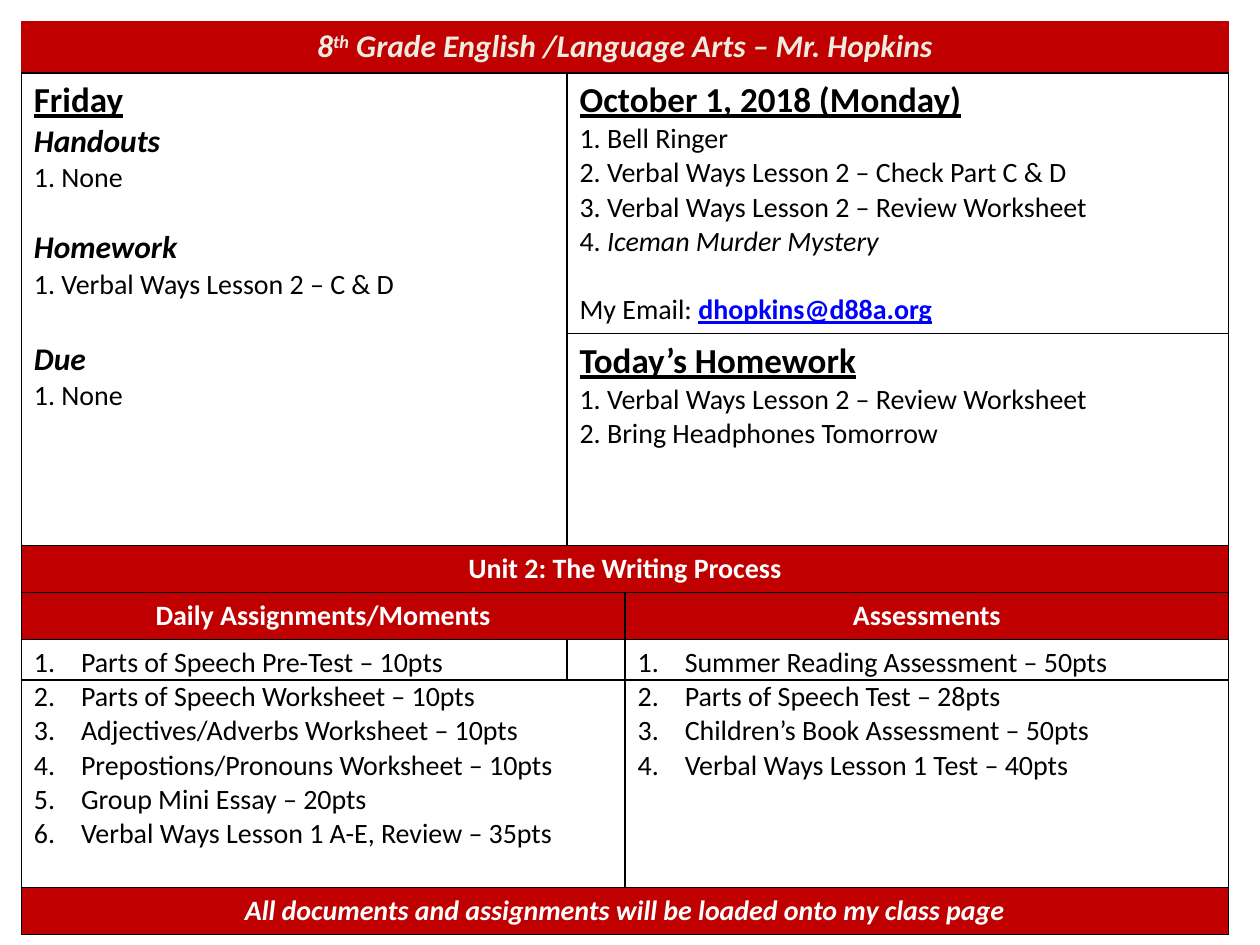
import pptx
import pptx.util
import pptx.dml.color
import pptx.enum.text
import pptx.oxml
import lxml.etree
from pptx.util import Cm, Pt

NS = "http://schemas.openxmlformats.org/drawingml/2006/main"
RED, WHITE, CREAM, BLACK, BLUE = "C00000", "FFFFFF", "EEECE1", "000000", "0000FF"

# Run styles: size, colour, marks (b bold, i italic, u underline, s superscript)
BAR = (18, CREAM, "bi")
SUP = (18, CREAM, "bis")
BAND = (16, WHITE, "b")
FOOT = (16, WHITE, "bi")
HEAD = (20, BLACK, "bu")
SUB = (18, BLACK, "bi")
BODY = (16, BLACK, "")
BOOK = (16, BLACK, "i")
MAIL = (16, BLUE, "bu")


def grid(top, cols, rows, edge):
    """Add a plain table; edge tells whether cells get black borders."""
    frame = slide.shapes.add_table(len(rows), len(cols), Cm(0.43), Cm(top),
                                   Cm(sum(cols)), Cm(sum(rows)))
    table = frame.table
    table.first_row = table.horz_banding = False
    # "No Style, No Grid"
    table._tbl.tblPr.find(f"{{{NS}}}tableStyleId").text = \
        "{2D5ABB26-0587-4C30-8999-92F81FD0307C}"
    for col, wide in zip(table.columns, cols):
        col.width = Cm(wide)
    for row, high in zip(table.rows, rows):
        row.height = Cm(high)
    for cell in table.iter_cells():
        props = cell._tc.get_or_add_tcPr()
        for side in ("lnL", "lnR", "lnT", "lnB") if edge else ():
            props.append(pptx.oxml.parse_xml(
                f'<a:{side} xmlns:a="{NS}" w="12700"><a:solidFill>'
                f'<a:srgbClr val="{BLACK}"/></a:solidFill></a:{side}>'))
        cell.fill.background()
    return table


def write(cell, lines, fill=None, count=False):
    """Fill a cell; a line is a list of (style, text) runs, or a gap in points."""
    if fill:
        cell.fill.solid()
        cell.fill.fore_color.rgb = pptx.dml.color.RGBColor.from_string(fill)
    frame, gap, first = cell.text_frame, 0, True
    for line in lines:
        if isinstance(line, (int, float)):
            gap = line
            continue
        para = frame.paragraphs[0] if first else frame.add_paragraph()
        first = False
        if count:
            props = para._p.get_or_add_pPr()
            props.set("marL", str(Cm(0.95)))
            props.set("indent", str(-Cm(0.95)))
            lxml.etree.SubElement(props, f"{{{NS}}}buFont", typeface="+mj-lt")
            lxml.etree.SubElement(props, f"{{{NS}}}buAutoNum", type="arabicPeriod")
        if fill:
            para.alignment = pptx.enum.text.PP_ALIGN.CENTER
        if gap:
            para.space_before = Pt(gap)
            gap = 0
        for (size, tint, marks), text in line:
            run = para.add_run()
            run.text = text
            font = run.font
            font.name, font.size = "Calibri", Pt(size)
            font.color.rgb = pptx.dml.color.RGBColor.from_string(tint)
            font.bold, font.italic = "b" in marks, "i" in marks
            font.underline = "u" in marks
            if "s" in marks:
                run._r.get_or_add_rPr().set("baseline", "30000")


deck = pptx.Presentation()
deck.slide_width, deck.slide_height = Cm(25.4), Cm(19.05)
slide = deck.slides.add_slide(deck.slide_layouts[6])

# Agenda: last class on the left, today on the right
plan = grid(1.47, [11, 13.34], [4.65, 4.65], True)
plan.cell(0, 0).merge(plan.cell(1, 0))
write(plan.cell(0, 0), [
    [(HEAD, "Friday")],
    [(SUB, "Handouts")],
    [(BODY, "1. None")],
    19.5,
    [(SUB, "Homework")],
    [(BODY, "1. Verbal Ways Lesson 2 – C & D")],
    22,
    [(SUB, "Due")],
    [(BODY, "1. None")],
])
write(plan.cell(0, 1), [
    [(HEAD, "October 1, 2018 (Monday)")],
    [(BODY, "1. Bell Ringer")],
    [(BODY, "2. Verbal Ways Lesson 2 – Check Part C & D")],
    [(BODY, "3. Verbal Ways Lesson 2 – Review Worksheet")],
    [(BODY, "4. "), (BOOK, "Iceman Murder Mystery")],
    19.5,
    [(BODY, "My Email: "), (MAIL, "dhopkins@d88a.org")],
])
write(plan.cell(1, 1), [
    [(HEAD, "Today’s Homework")],
    [(BODY, "1. Verbal Ways Lesson 2 – Review Worksheet")],
    [(BODY, "2. Bring Headphones Tomorrow")],
])

# Class banner
top = grid(0.43, [24.34], [1.03], False)
write(top.cell(0, 0), [[(BAR, "8"), (SUP, "th"),
                        (BAR, " Grade English /Language Arts – Mr. Hopkins")]], RED)

# Unit work and scores
unit = grid(11, [12.17, 12.17], [0.94, 0.94, 5, 0.94], True)
for row in (0, 3):
    unit.cell(row, 0).merge(unit.cell(row, 1))
write(unit.cell(0, 0), [[(BAND, "Unit 2: The Writing Process")]], RED)
work = {
    "Daily Assignments/Moments": [
        "Parts of Speech Pre-Test – 10pts",
        "Parts of Speech Worksheet – 10pts",
        "Adjectives/Adverbs Worksheet – 10pts",
        "Prepostions/Pronouns Worksheet – 10pts",
        "Group Mini Essay – 20pts",
        "Verbal Ways Lesson 1 A-E, Review – 35pts",
    ],
    "Assessments": [
        "Summer Reading Assessment – 50pts",
        "Parts of Speech Test – 28pts",
        "Children’s Book Assessment – 50pts",
        "Verbal Ways Lesson 1 Test – 40pts",
    ],
}
for col, (name, items) in enumerate(work.items()):
    write(unit.cell(1, col), [[(BAND, name)]], RED)
    write(unit.cell(2, col), [[(BODY, item)] for item in items], count=True)
write(unit.cell(3, 0), [[(FOOT, "All documents and assignments will be loaded "
                                "onto my class page")]], RED)

deck.save("out.pptx")
